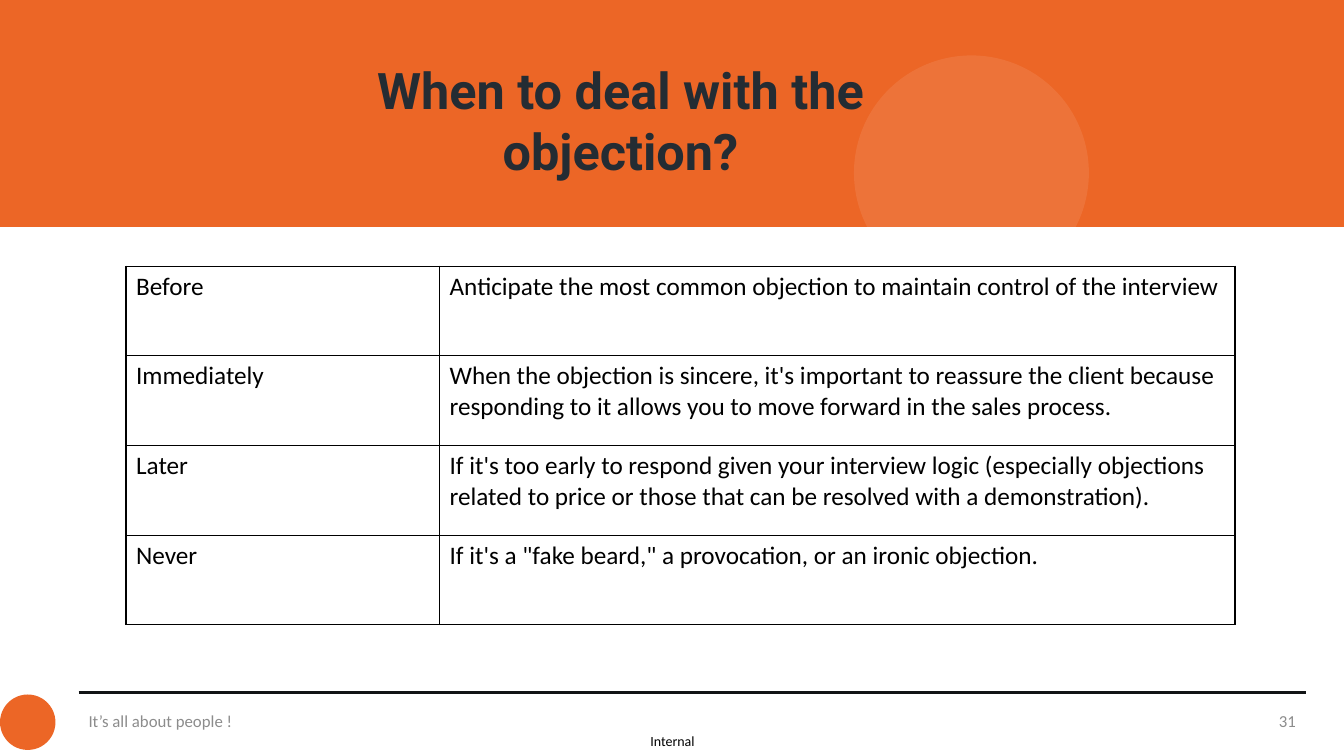
from lxml import etree
from pptx import Presentation
from pptx.dml.color import RGBColor
from pptx.enum.shapes import MSO_CONNECTOR, MSO_SHAPE
from pptx.enum.text import MSO_ANCHOR, PP_ALIGN
from pptx.oxml.ns import qn
from pptx.util import Inches, Pt

LEFT, CENTER, RIGHT = PP_ALIGN.LEFT, PP_ALIGN.CENTER, PP_ALIGN.RIGHT
TOP, MIDDLE = MSO_ANCHOR.TOP, MSO_ANCHOR.MIDDLE
RECTANGLE, OVAL = MSO_SHAPE.RECTANGLE, MSO_SHAPE.OVAL

ORANGE = RGBColor(0xEC, 0x66, 0x26)
WHITE = RGBColor(0xFF, 0xFF, 0xFF)
BLACK = RGBColor(0, 0, 0)
INK = RGBColor(0x12, 0x14, 0x16)
SLATE = RGBColor(0x24, 0x2C, 0x33)
GRAY = RGBColor(0x8C, 0x8C, 0x8C)

# text, (left, top, width, height), size, font, colour, bold, alignment, anchor
TEXTS = [
    ("When to deal with the objection?", (2.8, 0.54, 6.71, 1.31), 36, "Roboto", SLATE, True, CENTER, TOP),
    ("It’s all about people !", (0.78, 6.95, 9.06, 0.4), 12, "Calibri", GRAY, False, LEFT, MIDDLE),
    ("31", (12.34, 6.95, 0.61, 0.4), 12, "Calibri", GRAY, False, RIGHT, MIDDLE),
    ("Internal", (6.3, 7.21, 0.74, 0.29), 10, "Calibri", BLACK, False, CENTER, MIDDLE),
]

# shape, (left, top, width, height), colour, opacity in percent
SHAPES = [
    (RECTANGLE, (0, 0, 13.33, 2.25), ORANGE, 100),
    (OVAL, (8.47, 0.55, 2.33, 2.33), WHITE, 9),
    (OVAL, (0, 6.89, 0.55, 0.55), ORANGE, 100),
]

TIMINGS = [
    ("Before", "Anticipate the most common objection to maintain control of the interview"),
    ("Immediately", "When the objection is sincere, it's important to reassure the client because "
                    "responding to it allows you to move forward in the sales process."),
    ("Later", "If it's too early to respond given your interview logic (especially objections "
              "related to price or those that can be resolved with a demonstration)."),
    ("Never", "If it's a \"fake beard,\" a provocation, or an ironic objection."),
]
TABLE_LEFT, TABLE_TOP = 1.25, 2.64
COLUMN_WIDTHS = (3.11, 7.89)
ROW_HEIGHT = 0.89
FOOTER_LINE = (0.78, 6.87, 12.95, 6.87)


def inches(values):
    return [Inches(value) for value in values]


def style_text(frame, size, font, color, bold=False, align=LEFT):
    for para in frame.paragraphs:
        para.alignment = align
        for span in para.runs:
            span.font.size = Pt(size)
            span.font.name = font
            span.font.bold = bold
            span.font.color.rgb = color


def add_text(page, text, place, size, font, color, bold, align, anchor):
    frame = page.shapes.add_textbox(*inches(place)).text_frame
    frame.word_wrap = True
    frame.vertical_anchor = anchor
    frame.text = text
    style_text(frame, size, font, color, bold, align)


def add_plain_shape(page, kind, place, color, opacity):
    shape = page.shapes.add_shape(kind, *inches(place))
    shape.shadow.inherit = False
    shape.fill.solid()
    shape.fill.fore_color.rgb = color
    shape.line.fill.background()
    if opacity < 100:
        tint = shape.fill._xPr.find(".//" + qn("a:srgbClr"))
        etree.SubElement(tint, qn("a:alpha")).set("val", str(opacity * 1000))


def add_rule(page, ends, color, width):
    rule = page.shapes.add_connector(MSO_CONNECTOR.STRAIGHT, *inches(ends))
    rule.line.color.rgb = color
    rule.line.width = Pt(width)
    etree.SubElement(rule._element.spPr, qn("a:effectLst"))


def set_borders(cell, color, width):
    """Draw all four edges of a cell; edges must come before its fill."""
    properties = cell._tc.get_or_add_tcPr()
    for position, side in enumerate(("lnL", "lnR", "lnT", "lnB")):
        edge = etree.Element(qn("a:" + side), w=str(Pt(width)))
        fill = etree.SubElement(edge, qn("a:solidFill"))
        etree.SubElement(fill, qn("a:srgbClr")).set("val", str(color))
        properties.insert(position, edge)


def add_timing_table(page):
    place = (TABLE_LEFT, TABLE_TOP, sum(COLUMN_WIDTHS), ROW_HEIGHT * len(TIMINGS))
    table = page.shapes.add_table(len(TIMINGS), len(COLUMN_WIDTHS), *inches(place)).table
    table.first_row = table.horz_banding = False
    for column, width in zip(table.columns, COLUMN_WIDTHS):
        column.width = Inches(width)
    for row, texts in zip(table.rows, TIMINGS):
        row.height = Inches(ROW_HEIGHT)
        for cell, text in zip(row.cells, texts):
            cell.text_frame.text = text
            style_text(cell.text_frame, 18, "Calibri", BLACK)
            cell.fill.background()
            set_borders(cell, BLACK, 1)


def main():
    deck = Presentation()
    deck.slide_width, deck.slide_height = Inches(13.33), Inches(7.5)
    page = deck.slides.add_slide(deck.slide_layouts[6])
    for shape in SHAPES:
        add_plain_shape(page, *shape)
    add_rule(page, FOOTER_LINE, INK, 1.5)
    for text in TEXTS:
        add_text(page, *text)
    add_timing_table(page)
    deck.save("out.pptx")


if __name__ == "__main__":
    main()
